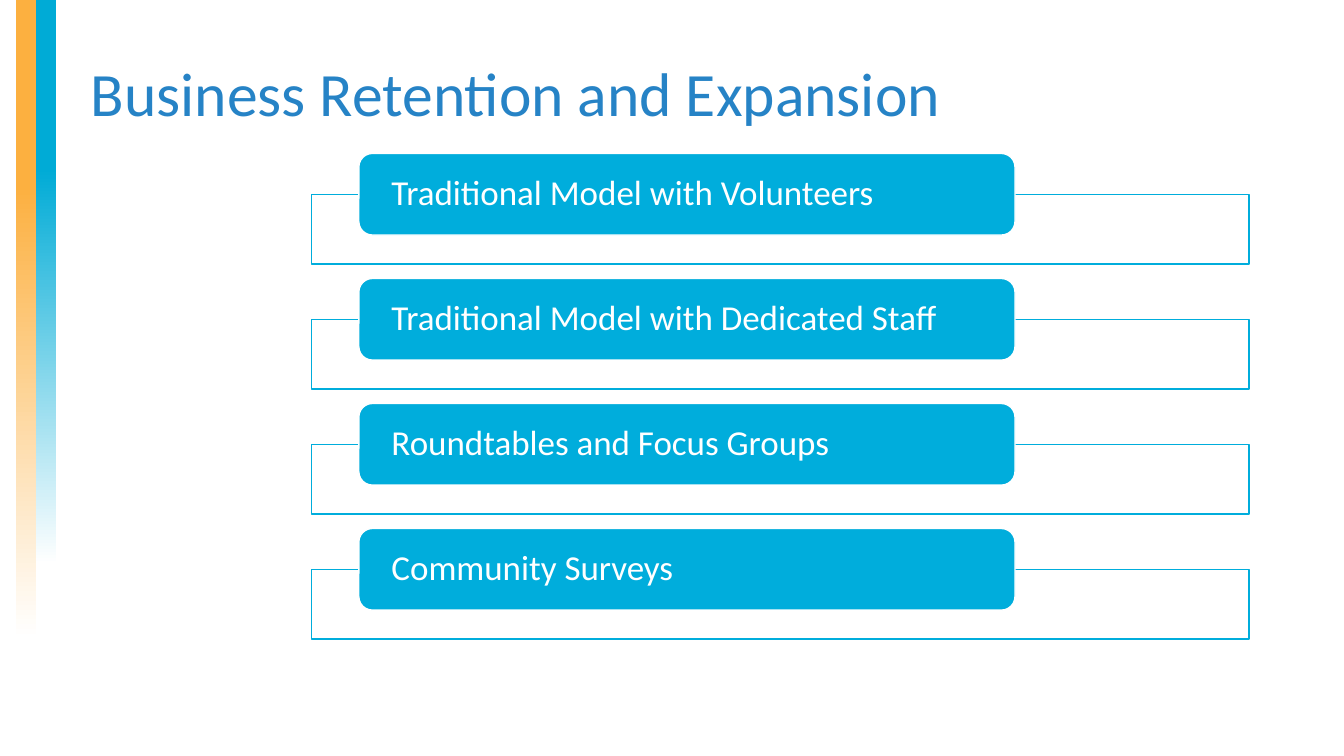
from pptx import Presentation
from pptx.dml.color import RGBColor
from pptx.enum.shapes import MSO_SHAPE as SHAPE
from pptx.enum.text import MSO_ANCHOR as ANCHOR, PP_ALIGN as ALIGN
from pptx.util import Pt


def rgb(value):
    return RGBColor.from_string(value)


def write(sp, text, size, color, inset=7.2):
    tf = sp.text_frame
    tf.word_wrap = True
    tf.vertical_anchor = ANCHOR.MIDDLE
    tf.margin_left = tf.margin_right = Pt(inset)
    p = tf.paragraphs[0]
    p.alignment = ALIGN.LEFT
    p.line_spacing = 0.9
    r = p.add_run()
    r.text = text
    r.font.name = "Calibri"
    r.font.size = Pt(size)
    r.font.color.rgb = rgb(color)


prs = Presentation()
prs.slide_width, prs.slide_height = Pt(960), Pt(540)
s = prs.slides.add_slide(prs.slide_layouts[5])

for left, height, color, start in [
    (11.4, 456, "FCB040", 0.29),
    (25.8, 403.2, "00ABD6", 0.3),
]:
    bar = s.shapes.add_shape(SHAPE.RECTANGLE, Pt(left), Pt(0), Pt(14.4), Pt(height))
    bar.shadow.inherit = False
    bar.line.fill.background()
    bar.fill.gradient()
    bar.fill.gradient_angle = 270
    for stop, stop_color, position in zip(
        bar.fill.gradient_stops, (color, "FFFFFF"), (start, 1)
    ):
        stop.color.rgb = rgb(stop_color)
        stop.position = position

title = s.shapes.title
title.left, title.top, title.width, title.height = Pt(57.6), Pt(16.6), Pt(879), Pt(104.4)
write(title, "Business Retention and Expansion", 44, "2683C6")

models = [
    "Traditional Model with Volunteers",
    "Traditional Model with Dedicated Staff",
    "Roundtables and Focus Groups",
    "Community Surveys",
]
for i, model in enumerate(models):
    offset = i * 89.3
    frame = s.shapes.add_shape(
        SHAPE.RECTANGLE, Pt(222.5), Pt(139 + offset), Pt(669.6), Pt(49.6)
    )
    label = s.shapes.add_shape(
        SHAPE.ROUNDED_RECTANGLE, Pt(256.3), Pt(109.6 + offset), Pt(468.7), Pt(58.3)
    )
    for sp, fill, line in [(frame, "FFFFFF", "00ADDC"), (label, "00ADDC", "FFFFFF")]:
        sp.shadow.inherit = False
        sp.fill.solid()
        sp.fill.fore_color.rgb = rgb(fill)
        sp.line.color.rgb = rgb(line)
        sp.line.width = Pt(1)
    write(label, model, 25, "FFFFFF", inset=20.5)

prs.save("out.pptx")
